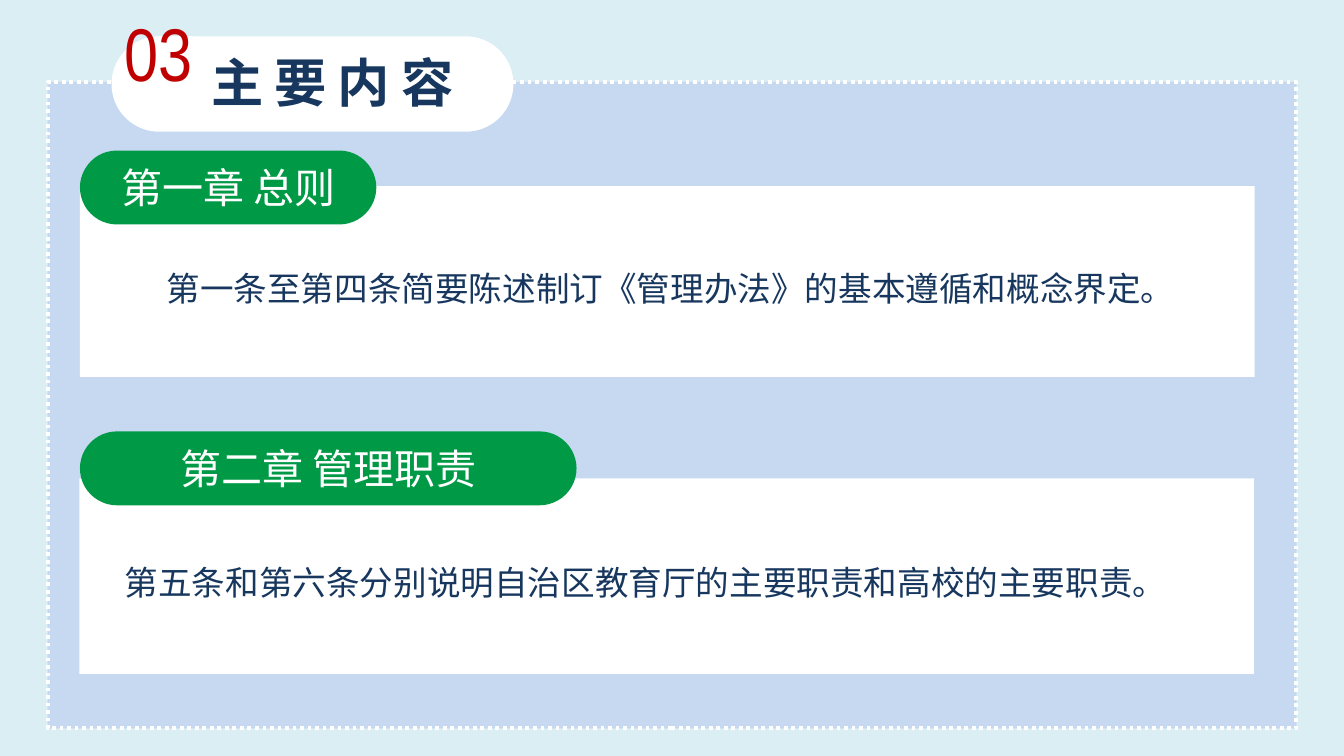
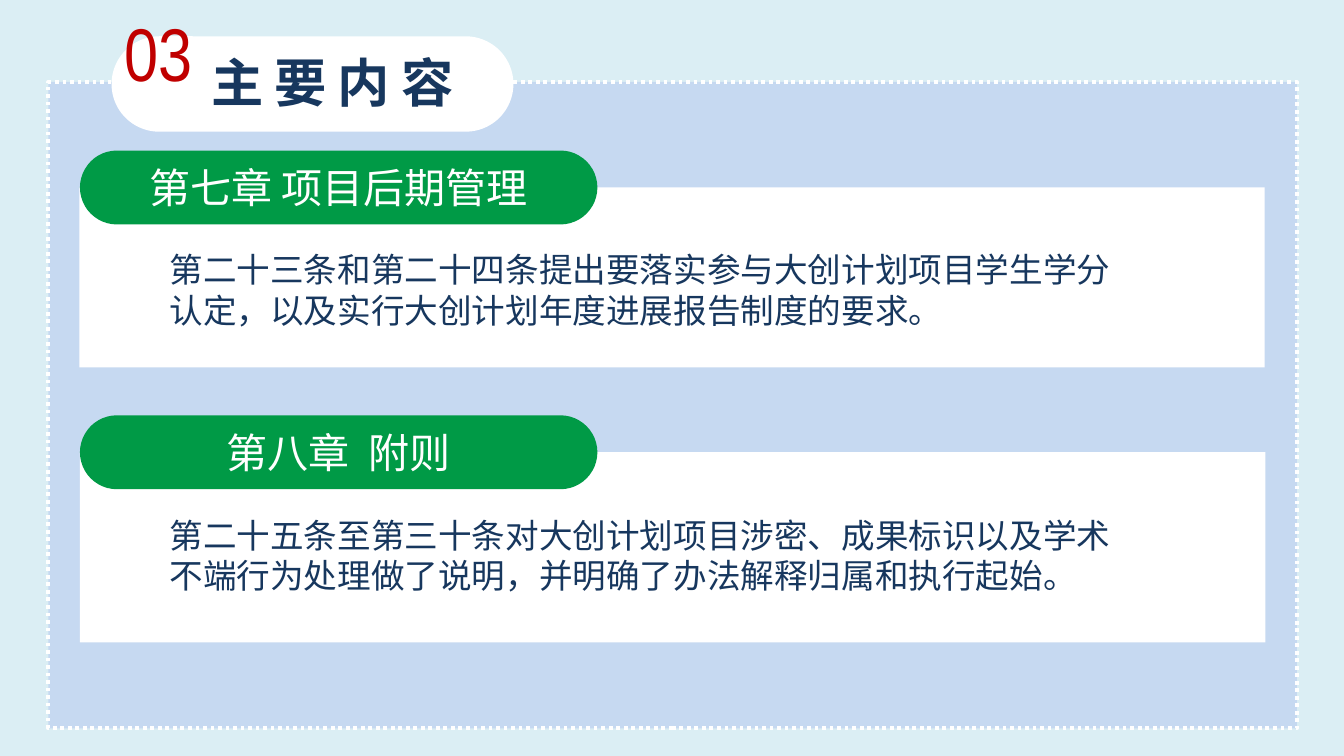
from lxml.etree import SubElement
from pptx import Presentation
from pptx.dml.color import RGBColor
from pptx.enum.dml import MSO_LINE
from pptx.enum.shapes import MSO_SHAPE
from pptx.enum.text import MSO_ANCHOR, MSO_AUTO_SIZE, PP_ALIGN
from pptx.oxml import parse_xml
from pptx.oxml.ns import nsdecls, qn
from pptx.util import Inches, Pt

COLS, ROWS = 100, 56.25
CELL = Inches(10) / COLS
HAN, SLIM = "Noto Sans CJK SC", "Arial Narrow"
HUES = {"page": "DBEEF4", "frame": "C6D9F1", "white": "FFFFFF",
        "red": "C00000", "navy": "17375E", "green": "009A46"}


def hue(name):
    return RGBColor.from_string(HUES[name])


def span(box):
    """Turn columns and rows into lengths."""
    return [round(n * CELL) for n in box]


def block(slide, box, fill, kind=MSO_SHAPE.RECTANGLE):
    shape = slide.shapes.add_shape(kind, *span(box))
    shape.shadow.inherit = False
    shape.line.fill.background()
    if fill:
        shape.fill.solid()
        shape.fill.fore_color.rgb = hue(fill)
    else:
        shape.fill.background()
    return shape


def pill(slide, box, fill=None):
    shape = block(slide, box, fill, MSO_SHAPE.ROUNDED_RECTANGLE)
    shape.adjustments[0] = 0.5
    return shape


def label(slide, box):
    shape = slide.shapes.add_textbox(*span(box))
    shape.text_frame.auto_size = MSO_AUTO_SIZE.SHAPE_TO_FIT_TEXT
    return shape


def write(shape, text, size, color, face=HAN, align=PP_ALIGN.LEFT, wrap=True):
    """Fill a shape with one paragraph and return its font properties."""
    frame = shape.text_frame
    frame.word_wrap = wrap
    frame.text = text
    para = frame.paragraphs[0]
    para.alignment = align
    font = para.font
    font.size, font.name = Pt(size), face
    font.color.rgb = hue(color)
    props = para._p.pPr.find(qn("a:defRPr"))
    SubElement(props, qn("a:ea")).set("typeface", face)
    return props


def frame(slide, left):
    shape = block(slide, (left, 6.1, 92.9, 48.1), "frame")
    shape.line.color.rgb = hue("white")
    shape.line.width = Pt(2)
    shape.line.dash_style = MSO_LINE.ROUND_DOT


def header(slide, num, text):
    left, top = 8.3, 2.7
    pill(slide, (left, top, 29.9, 7.1), "white")

    mark = label(slide, (left, 0, 7.9, 7.7))
    props = write(mark, num, 40, "red", SLIM, wrap=False)
    edge = (f'<a:ln {nsdecls("a")} w="{Pt(2.25)}"><a:solidFill>'
            f'<a:srgbClr val="{HUES["white"]}"/></a:solidFill></a:ln>')
    props.insert(0, parse_xml(edge))

    title = slide.shapes.title
    slide.shapes._spTree.append(title._element)
    title.left, title.top, title.width, title.height = span(
        (left + 6.4, top + 0.5, 21.7, 5.7))
    title.text_frame.auto_size = MSO_AUTO_SIZE.SHAPE_TO_FIT_TEXT
    title.text_frame.vertical_anchor = MSO_ANCHOR.TOP
    props = write(title, text, 28, "navy")
    props.set("b", "1")
    props.set("spc", "600")


def card(slide, box, tab, head, make, inset, text):
    """White panel; tab is (rise, width), inset is the body's box within it."""
    left, top = box[:2]
    rise, wide = tab
    block(slide, box, "white")
    write(pill(slide, (5.95, top - rise, wide, 5.5), "green"), head, 22,
          "white", align=PP_ALIGN.CENTER)
    dx, dy, *size = inset
    write(make(slide, (left + dx, top + dy, *size)), text, 18, "navy")


PAGES = [
    (3.55, [
        ((5.95, 13.85, 87.4, 14.2), (2.65, 22.05), "第一章 总则",
         label, (5.45, 5.6, 79.2, 4),
         "第一条至第四条简要陈述制订《管理办法》的基本遵循和概念界定。"),
        ((5.9, 35.6, 87.4, 14.55), (3.5, 36.95), "第二章 管理职责",
         label, (2.4, 5.75, 80.3, 4),
         "第五条和第六条分别说明自治区教育厅的主要职责和高校的主要职责。"),
    ]),
    (3.6, [
        ((5.9, 13.95, 88.2, 13.4), (2.75, 38.5), "第七章 项目后期管理",
         pill, (4.75, 4.25, 76.4, 6.7),
         "第二十三条和第二十四条提出要落实参与大创计划项目学生学分认定，"
         "以及实行大创计划年度进展报告制度的要求。"),
        ((5.95, 33.65, 88.2, 14.15), (2.75, 38.5), "第八章  附则",
         pill, (4.7, 4.3, 76.4, 6.7),
         "第二十五条至第三十条对大创计划项目涉密、成果标识以及学术"
         "不端行为处理做了说明，并明确了办法解释归属和执行起始。"),
    ]),
]


def main():
    prs = Presentation()
    prs.slide_width, prs.slide_height = span((COLS, ROWS))
    back = prs.slide_master.background.fill
    back.solid()
    back.fore_color.rgb = hue("page")
    for left, cards in PAGES:
        slide = prs.slides.add_slide(prs.slide_layouts[5])
        frame(slide, left)
        header(slide, "03", "主要内容")
        for item in cards:
            card(slide, *item)
    prs.save("out.pptx")


if __name__ == "__main__":
    main()
